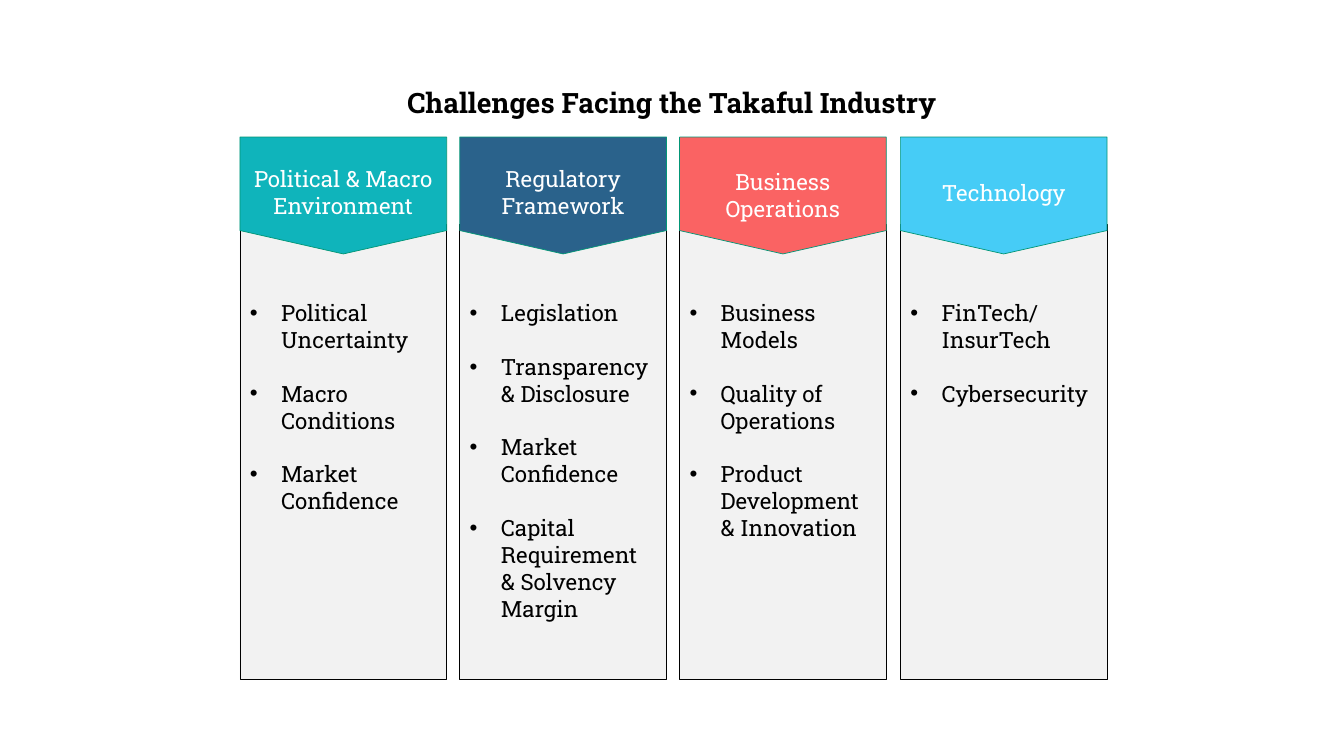
from dataclasses import dataclass

from lxml import etree
from pptx import Presentation
from pptx.dml.color import RGBColor
from pptx.enum.shapes import MSO_SHAPE
from pptx.enum.text import PP_ALIGN
from pptx.oxml.ns import qn
from pptx.util import Pt

RECT = MSO_SHAPE.RECTANGLE
ARROW = MSO_SHAPE.DOWN_ARROW
LEFT = PP_ALIGN.LEFT
CENTER = PP_ALIGN.CENTER
SCALE = 9144  # 100 px to the inch


@dataclass(frozen=True)
class Theme:
    font: str = "Roboto Slab"
    title: int = 20
    body: int = 16
    gap: float = 19.2
    ink: str = "000000"
    white: str = "FFFFFF"
    panel: str = "F2F2F2"
    edge: str = "029676"


THEME = Theme()

# Heading, colour, heading top, heading height, list height, items
PILLARS = [
    ("Political & Macro Environment", "0FB4BB", 159, 64, 252,
     ["Political Uncertainty", "Macro Conditions", "Market Confidence"]),
    ("Regulatory Framework", "2A628B", 159, 64, 333,
     ["Legislation", "Transparency & Disclosure", "Market Confidence",
      "Capital Requirement & Solvency Margin"]),
    ("Business Operations", "FA6363", 162, 64, 252,
     ["Business Models", "Quality of Operations",
      "Product Development & Innovation"]),
    ("Technology", "46CCF6", 173, 37, 118,
     ["FinTech/ InsurTech", "Cybersecurity"]),
]


def px(*sizes):
    return [size * SCALE for size in sizes]


def add_block(slide, kind, box, fill, line):
    block = slide.shapes.add_shape(kind, *px(*box))
    block.shadow.inherit = False
    block.fill.solid()
    block.fill.fore_color.rgb = RGBColor.from_string(fill)
    block.line.color.rgb = RGBColor.from_string(line)
    block.line.width = Pt(0.5)
    return block


def add_bullet(para):
    props = para._p.get_or_add_pPr()
    indent = 31 * SCALE
    props.set("marL", str(indent))
    props.set("indent", str(-indent))
    etree.SubElement(props, qn("a:buFont")).set("typeface", "Arial")
    etree.SubElement(props, qn("a:buChar")).set("char", "•")


def add_text(slide, box, lines, color, size=THEME.body, bold=False,
             align=CENTER, bullet=False):
    frame = slide.shapes.add_textbox(*px(*box)).text_frame
    frame.word_wrap = True
    for i, line in enumerate(lines):
        para = frame.add_paragraph() if i else frame.paragraphs[0]
        para.text = line
        para.alignment = align
        if bullet:
            add_bullet(para)
        if i:
            para.space_before = Pt(THEME.gap)
        para.font.name = THEME.font
        para.font.size = Pt(size)
        para.font.bold = bold
        para.font.color.rgb = RGBColor.from_string(color)


def add_pillar(slide, left, pillar):
    head, color, top, height, depth, items = pillar
    # Panel and pointed header
    add_block(slide, RECT, (left, 223, 205, 451), THEME.panel, THEME.ink)
    arrow = add_block(slide, ARROW, (left, 136, 205, 116), color, THEME.edge)
    arrow.adjustments[0] = 1
    arrow.adjustments[1] = 0.2
    # Heading and list
    add_text(slide, (left - 6, top, 217, height), [head], THEME.white)
    add_text(slide, (left, 292, 205, depth), items, THEME.ink,
             align=LEFT, bullet=True)


def main():
    deck = Presentation()
    deck.slide_width, deck.slide_height = px(1333, 750)
    slide = deck.slides.add_slide(deck.slide_layouts[6])

    # Title
    add_text(slide, (0, 80, 1333, 44),
             ["Challenges Facing the Takaful Industry"], THEME.ink,
             size=THEME.title, bold=True)

    # Four pillars, evenly spread
    for i, pillar in enumerate(PILLARS):
        add_pillar(slide, 238 + 655 * i // 3, pillar)

    deck.save("out.pptx")


if __name__ == "__main__":
    main()
